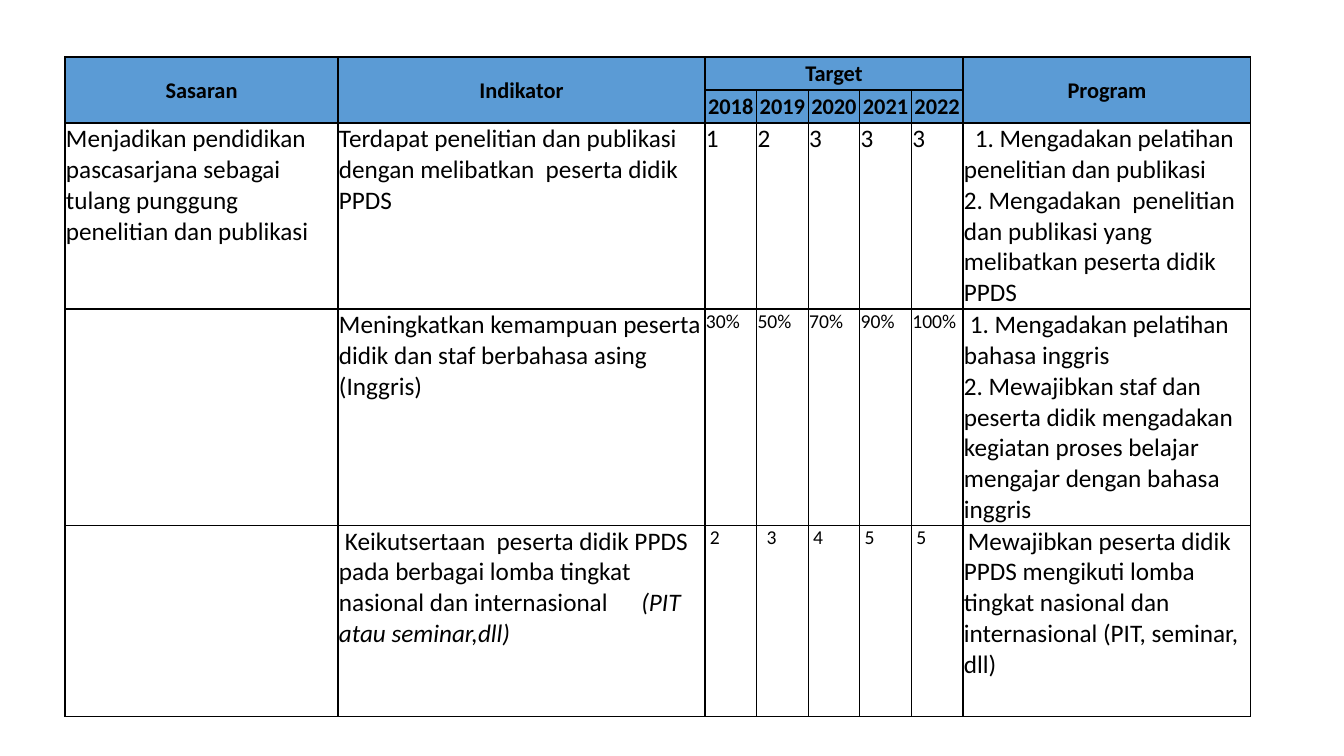
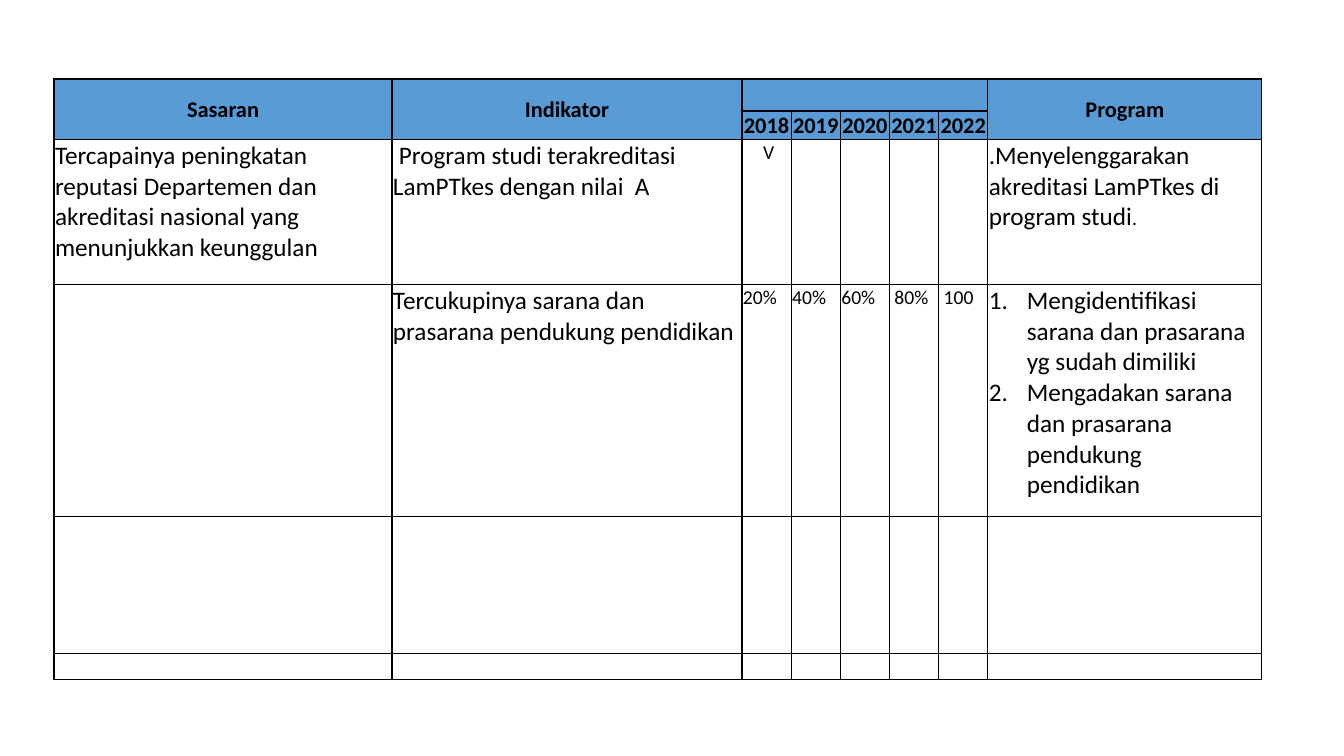
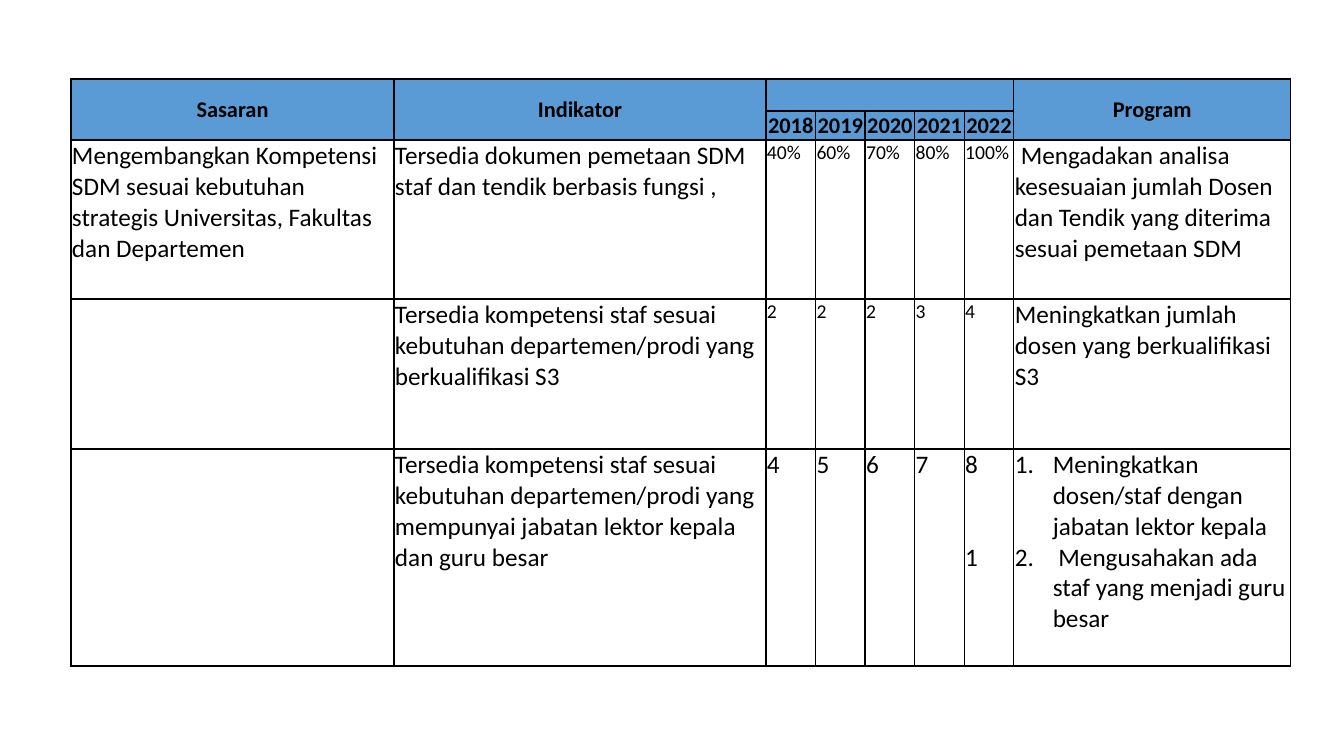
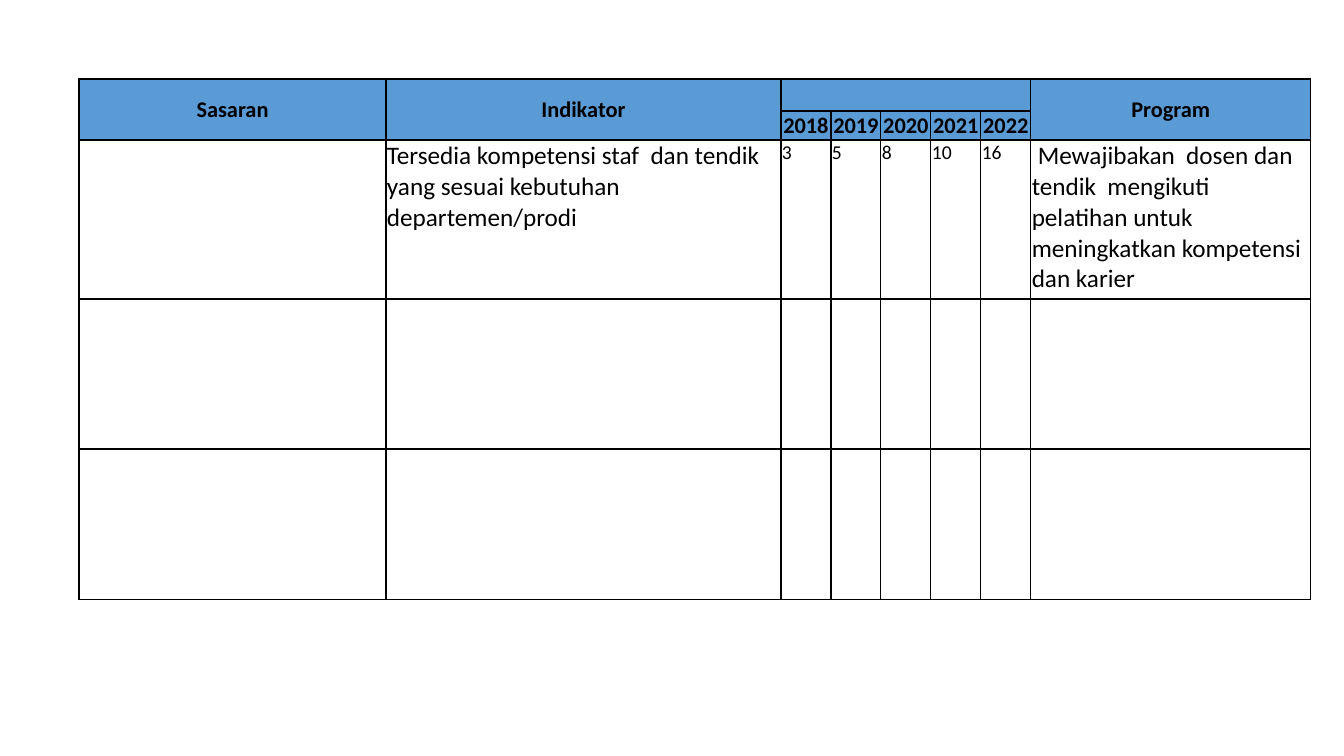
from dataclasses import dataclass
from typing import Optional

from lxml import etree
from pptx import Presentation
from pptx.dml.color import RGBColor
from pptx.enum.text import MSO_ANCHOR, PP_ALIGN
from pptx.oxml.ns import qn
from pptx.util import Pt

CENTER, LEFT = PP_ALIGN.CENTER, PP_ALIGN.LEFT
MIDDLE, TOP = MSO_ANCHOR.MIDDLE, MSO_ANCHOR.TOP
SLIDE_WIDTH, SLIDE_HEIGHT = 1344, 756


@dataclass(frozen=True)
class Theme:
    font: str = "Calibri"
    text: str = "000000"
    border: str = "000000"
    header_fill: str = "5B9BD5"
    header_size: int = 16
    body_size: int = 18
    year_size: int = 14
    border_width: int = 1
    cell_inset: int = 1
    number_indent: int = 38


THEME = Theme()


@dataclass
class Tail:
    """A differently styled ending of a line."""
    text: str
    italic: bool = False
    size: Optional[int] = None


@dataclass
class Line:
    text: str
    indent: int = 0
    numbered: bool = False
    space_before: int = 0
    align: int = LEFT
    tail: Optional[Tail] = None


@dataclass
class Row:
    height: int
    goal: object = ""
    indicator: object = ""
    years: tuple = ("",) * 5
    program: object = ""
    year_size: int = THEME.year_size


@dataclass
class Plan:
    left: int
    top: int
    columns: tuple  # goal, indicator, all target years, program
    header_heights: tuple
    rows: list
    target_title: str = ""


# Content
YEARS = ("2018", "2019", "2020", "2021", "2022")
FIRST_YEAR = 2
LAST_YEAR = FIRST_YEAR + len(YEARS) - 1
PROGRAM = LAST_YEAR + 1

PLANS = [
    Plan(65, 57, (273, 367, 258, 288), (33, 33), [
        Row(186,
            "Menjadikan pendidikan pascasarjana sebagai tulang punggung penelitian dan publikasi",
            "Terdapat penelitian dan publikasi dengan melibatkan  peserta didik PPDS",
            ("1", "2", "3", "3", "3"),
            [Line("1. Mengadakan pelatihan penelitian dan publikasi", indent=11),
             "2. Mengadakan  penelitian dan publikasi yang melibatkan peserta didik PPDS"],
            THEME.body_size),
        Row(216, "",
            "Meningkatkan kemampuan peserta didik dan staf berbahasa asing (Inggris)",
            ("30%", "50%", "70%", "90%", "100%"),
            [Line("1. Mengadakan pelatihan bahasa inggris", indent=6),
             "2. Mewajibkan staf dan peserta didik mengadakan kegiatan proses belajar "
             "mengajar dengan bahasa inggris"]),
        Row(191, "",
            Line("Keikutsertaan  peserta didik PPDS pada berbagai lomba tingkat nasional "
                 "dan internasional ", indent=6,
                 tail=Tail("\t(PIT atau seminar,dll)", italic=True)),
            (Line("2", 4), Line("3", 9), Line("4", 4), Line("5", 4), Line("5", 4)),
            Line("Mewajibkan peserta didik PPDS mengikuti lomba tingkat nasional dan "
                 "internasional (PIT, seminar, dll)", indent=4)),
    ], target_title="Target"),
    Plan(54, 79, (338, 350, 246, 274), (32, 28), [
        Row(145,
            "Tercapainya peningkatan reputasi Departemen dan akreditasi nasional yang "
            "menunjukkan keunggulan",
            Line("Program studi terakreditasi LamPTkes dengan nilai  A", indent=6),
            (Line("V", indent=4, align=CENTER), "", "", "", ""),
            Line(".Menyelenggarakan akreditasi LamPTkes di program studi",
                 tail=Tail(".", size=THEME.year_size))),
        Row(232, "",
            "Tercukupinya sarana dan prasarana pendukung pendidikan",
            ("20%", "40%", "60%", Line("80%", 4), Line("100", 4)),
            [Line("Mengidentifikasi sarana dan prasarana yg sudah dimiliki", numbered=True),
             Line("Mengadakan sarana dan prasarana pendukung pendidikan", numbered=True)]),
        Row(137),
        Row(26),
    ]),
    Plan(71, 79, (323, 372, 248, 277), (32, 29), [
        Row(159,
            "Mengembangkan Kompetensi SDM sesuai kebutuhan strategis Universitas, "
            "Fakultas dan Departemen",
            "Tersedia dokumen pemetaan SDM staf dan tendik berbasis fungsi ,",
            ("40%", "60%", "70%", "80%", "100%"),
            Line("Mengadakan analisa kesesuaian jumlah Dosen dan Tendik yang diterima "
                 "sesuai pemetaan SDM", indent=6)),
        Row(150, "",
            "Tersedia kompetensi staf sesuai kebutuhan departemen/prodi yang berkualifikasi S3",
            ("2", "2", "2", "3", "4"),
            "Meningkatkan jumlah dosen yang berkualifikasi S3"),
        Row(217, "",
            "Tersedia kompetensi staf sesuai kebutuhan departemen/prodi yang mempunyai "
            "jabatan lektor kepala dan guru besar",
            ("4", "5", "6", "7", ["8", Line("1", space_before=44)]),
            [Line("Meningkatkan dosen/staf dengan jabatan lektor kepala", numbered=True),
             Line(" Mengusahakan ada staf yang menjadi guru besar", numbered=True)],
            THEME.body_size),
    ]),
    Plan(79, 79, (307, 395, 250, 280), (32, 29), [
        Row(159, "",
            "Tersedia kompetensi staf  dan tendik yang sesuai kebutuhan departemen/prodi",
            ("3", "5", "8", "10", "16"),
            Line("Mewajibakan  dosen dan tendik  mengikuti pelatihan untuk meningkatkan "
                 "kompetensi dan karier", indent=6)),
        Row(150),
        Row(151),
    ]),
]


def px(length):
    return round(length * 914400 / 100.8)


# Text
def add_run(paragraph, text, size, bold=False, italic=False):
    run = paragraph.add_run()
    run.text = text
    font = run.font
    font.name, font.size, font.bold, font.italic = THEME.font, Pt(size), bold, italic
    font.color.rgb = RGBColor.from_string(THEME.text)


def write_line(paragraph, line, size, bold):
    paragraph.alignment = line.align
    if line.space_before:
        paragraph.space_before = Pt(line.space_before)
    properties = paragraph._p.get_or_add_pPr()
    if line.numbered:
        properties.set("marL", str(px(THEME.number_indent)))
        properties.set("indent", str(-px(THEME.number_indent)))
        number = etree.SubElement(properties, qn("a:buAutoNum"))
        number.set("type", "arabicPeriod")
    elif line.indent:
        properties.set("indent", str(px(line.indent)))
    if line.text:
        add_run(paragraph, line.text, size, bold)
    else:
        end = etree.SubElement(paragraph._p, qn("a:endParaRPr"))
        end.set("sz", str(THEME.year_size * 100))
    if line.tail:
        add_run(paragraph, line.tail.text, line.tail.size or size, bold, line.tail.italic)


def write_cell(cell, content, size, align=LEFT, bold=False):
    lines = content if isinstance(content, list) else [content]
    for index, line in enumerate(lines):
        if isinstance(line, str):
            line = Line(line, align=align)
        frame = cell.text_frame
        paragraph = frame.add_paragraph() if index else frame.paragraphs[0]
        write_line(paragraph, line, size, bold)


# Cells
def style_cell(cell, is_header):
    cell.margin_left = cell.margin_right = cell.margin_top = px(THEME.cell_inset)
    cell.margin_bottom = 0
    cell.vertical_anchor = MIDDLE if is_header else TOP
    properties = cell._tc.get_or_add_tcPr()
    for side in ("a:lnL", "a:lnR", "a:lnT", "a:lnB"):
        border = etree.SubElement(properties, qn(side), w=str(Pt(THEME.border_width)))
        fill = etree.SubElement(border, qn("a:solidFill"))
        etree.SubElement(fill, qn("a:srgbClr"), val=THEME.border)
    if is_header:
        cell.fill.solid()
        cell.fill.fore_color.rgb = RGBColor.from_string(THEME.header_fill)
    else:
        cell.fill.background()


# Table
def add_plan_table(slide, plan):
    goal, indicator, target, program = plan.columns
    widths = [goal, indicator] + [target / len(YEARS)] * len(YEARS) + [program]
    heights = list(plan.header_heights) + [row.height for row in plan.rows]
    table = slide.shapes.add_table(
        len(heights), len(widths), px(plan.left), px(plan.top),
        px(sum(widths)), px(sum(heights))).table
    table.first_row = table.horz_banding = False
    for column, width in zip(table.columns, widths):
        column.width = px(width)
    for table_row, height in zip(table.rows, heights):
        table_row.height = px(height)

    header_count = len(plan.header_heights)
    headers = [
        ["Sasaran", "Indikator", plan.target_title, "", "", "", "", "Program"],
        ["", "", *YEARS, ""],
    ]
    for row_index, texts in enumerate(headers):
        for column_index, text in enumerate(texts):
            cell = table.cell(row_index, column_index)
            style_cell(cell, True)
            write_cell(cell, text, THEME.header_size, CENTER, True)
    for column_index in (0, 1, PROGRAM):
        table.cell(0, column_index).merge(table.cell(1, column_index))
    table.cell(0, FIRST_YEAR).merge(table.cell(0, LAST_YEAR))

    for row_index, row in enumerate(plan.rows, header_count):
        contents = [row.goal, row.indicator, *row.years, row.program]
        for column_index, content in enumerate(contents):
            is_year = FIRST_YEAR <= column_index <= LAST_YEAR
            cell = table.cell(row_index, column_index)
            style_cell(cell, False)
            write_cell(cell, content, row.year_size if is_year else THEME.body_size)


def main():
    presentation = Presentation()
    presentation.slide_width = px(SLIDE_WIDTH)
    presentation.slide_height = px(SLIDE_HEIGHT)
    blank_layout = presentation.slide_layouts[6]
    for plan in PLANS:
        add_plan_table(presentation.slides.add_slide(blank_layout), plan)
    presentation.save("out.pptx")


if __name__ == "__main__":
    main()
